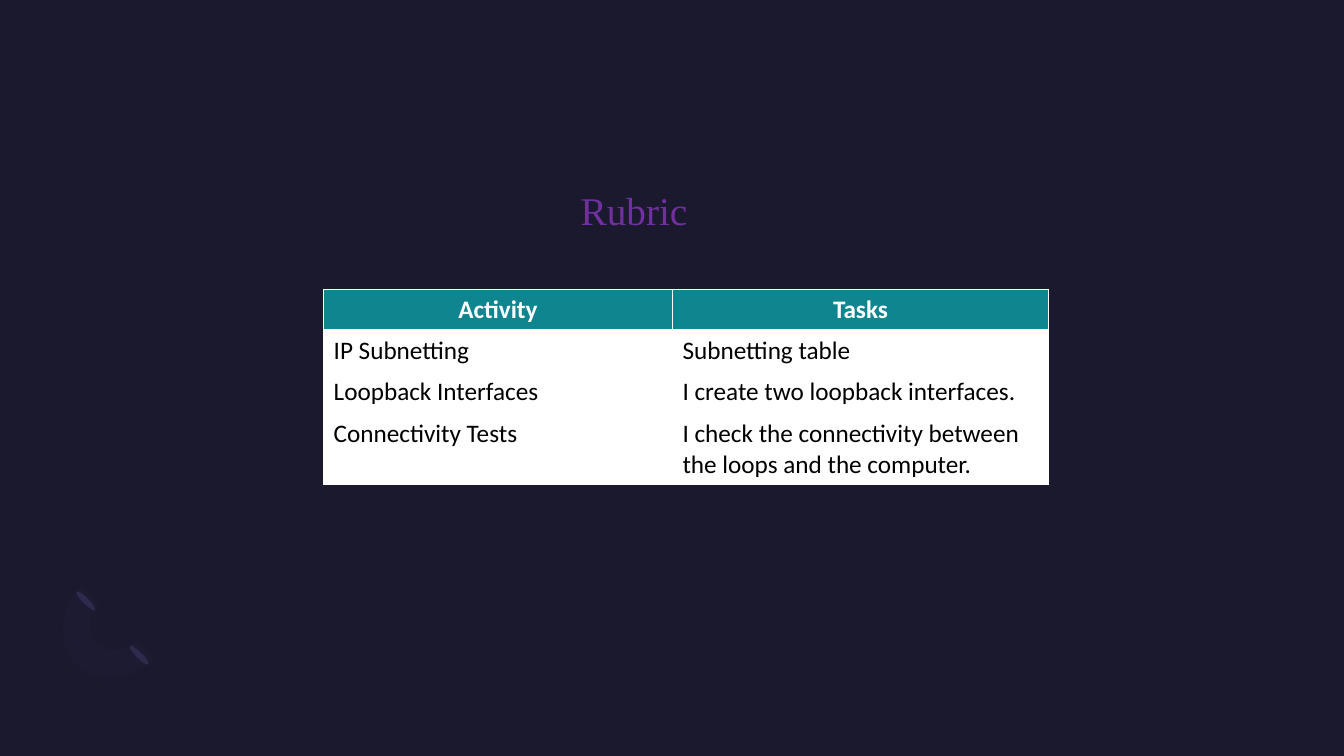
"""Build the rubric slide with its activity table and corner ornament."""
from lxml.etree import SubElement
from pptx import Presentation
from pptx.dml.color import RGBColor
from pptx.enum.shapes import MSO_SHAPE
from pptx.enum.text import MSO_ANCHOR, MSO_AUTO_SIZE, PP_ALIGN
from pptx.oxml import parse_xml
from pptx.oxml.ns import nsdecls, qn
from pptx.util import Inches, Pt


def paint(fill, color):
    fill.solid()
    fill.fore_color.rgb = RGBColor.from_string(color)


def write(frame, text, size=18, font="Calibri", color="000000", bold=False, align=PP_ALIGN.LEFT):
    paragraph = frame.paragraphs[0]
    paragraph.alignment = align
    run = paragraph.add_run()
    run.text = text
    run.font.size = Pt(size)
    run.font.name = font
    run.font.bold = bold
    run.font.color.rgb = RGBColor.from_string(color)
    return paragraph


presentation = Presentation()
presentation.slide_width = Inches(13.33)
presentation.slide_height = Inches(7.5)
slide = presentation.slides.add_slide(presentation.slide_layouts[5])
paint(slide.background.fill, "1B192E")

ornaments = []
for left, top in [(1.35, 6.37), (0.82, 5.83)]:
    ellipse = slide.shapes.add_shape(
        MSO_SHAPE.OVAL, Inches(left), Inches(top), Inches(0.06), Inches(0.26))
    ellipse.rotation = 135
    paint(ellipse.fill, "2C284A")
    ornaments.append(ellipse)

arc_curves = [
    [(0.76, 6.59), (0.56, 6.39), (0.58, 6.05), (0.81, 5.82)],
    [(0.99, 6.0), (0.87, 6.11), (0.86, 6.29), (0.96, 6.38)],
    [(0.96, 6.38), (1.06, 6.48), (1.23, 6.47), (1.35, 6.36)],
    [(1.52, 6.54), (1.3, 6.76), (0.95, 6.79), (0.76, 6.59)],
]
arc_points = []
for curve in arc_curves:
    for step in range(13):
        t = step / 12
        weights = [(1 - t) ** 3, 3 * t * (1 - t) ** 2, 3 * t ** 2 * (1 - t), t ** 3]
        arc_points.append(tuple(
            Inches(sum(weight * point[axis] for weight, point in zip(weights, curve)))
            for axis in (0, 1)))
builder = slide.shapes.build_freeform(*arc_points[0])
builder.add_line_segments(arc_points[1:], close=True)
arc = builder.convert_to_shape()
paint(arc.fill, "7771B2")
arc_color = arc.fill._xPr.find(qn("a:solidFill"))[0]
SubElement(arc_color, qn("a:alpha"), val="3000")
ornaments.append(arc)

for shape in ornaments:
    shape.line.fill.background()
    shape.shadow.inherit = False

title = slide.shapes.title
title.left, title.top = Inches(5.76), Inches(1.8)
title.width, title.height = Inches(1.36), Inches(0.64)
frame = title.text_frame
frame.margin_left = frame.margin_top = frame.margin_right = frame.margin_bottom = 0
frame.word_wrap = True
frame.auto_size = MSO_AUTO_SIZE.NONE
frame.vertical_anchor = MSO_ANCHOR.TOP
heading = write(frame, "Rubric", size=28, font="Times New Roman", color="7030A0")
heading.line_spacing = 1.1
heading.space_before = Pt(10)
heading.space_after = Pt(8)

rows = [
    ("Activity", "Tasks"),
    ("IP Subnetting", "Subnetting table"),
    ("Loopback Interfaces", "I create two loopback interfaces."),
    ("Connectivity Tests", "I check the connectivity between the loops and the computer."),
]
column_widths = [3.46, 3.73]
table = slide.shapes.add_table(
    len(rows), len(column_widths), Inches(3.21), Inches(2.87),
    Inches(sum(column_widths)), Inches(0.41 * len(rows))).table
for column, width in zip(table.columns, column_widths):
    column.width = Inches(width)

for row_index, texts in enumerate(rows):
    is_header = row_index == 0
    for column_index, text in enumerate(texts):
        cell = table.cell(row_index, column_index)
        properties = cell._tc.get_or_add_tcPr()
        for side in ("L", "R", "T", "B"):
            width = Pt(3 if is_header and side == "B" else 1)
            properties.append(parse_xml(
                f'<a:ln{side} {nsdecls("a")} w="{width}"><a:solidFill>'
                f'<a:srgbClr val="FFFFFF"/></a:solidFill></a:ln{side}>'))
        paint(cell.fill, "0E858F" if is_header else "FFFFFF")
        write(cell.text_frame, text, bold=is_header,
              color="FFFFFF" if is_header else "000000",
              align=PP_ALIGN.CENTER if is_header else PP_ALIGN.LEFT)

presentation.save("out.pptx")
